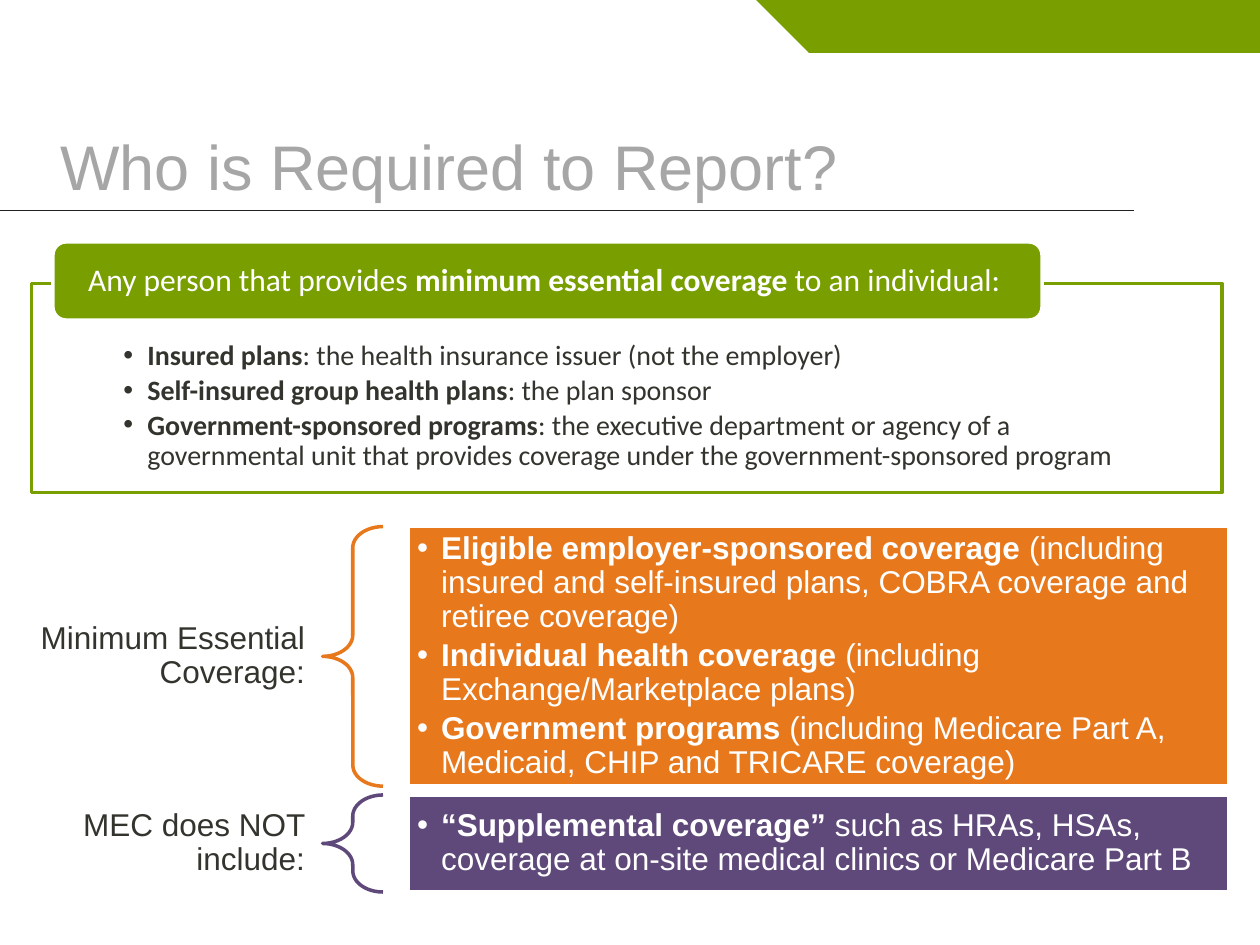
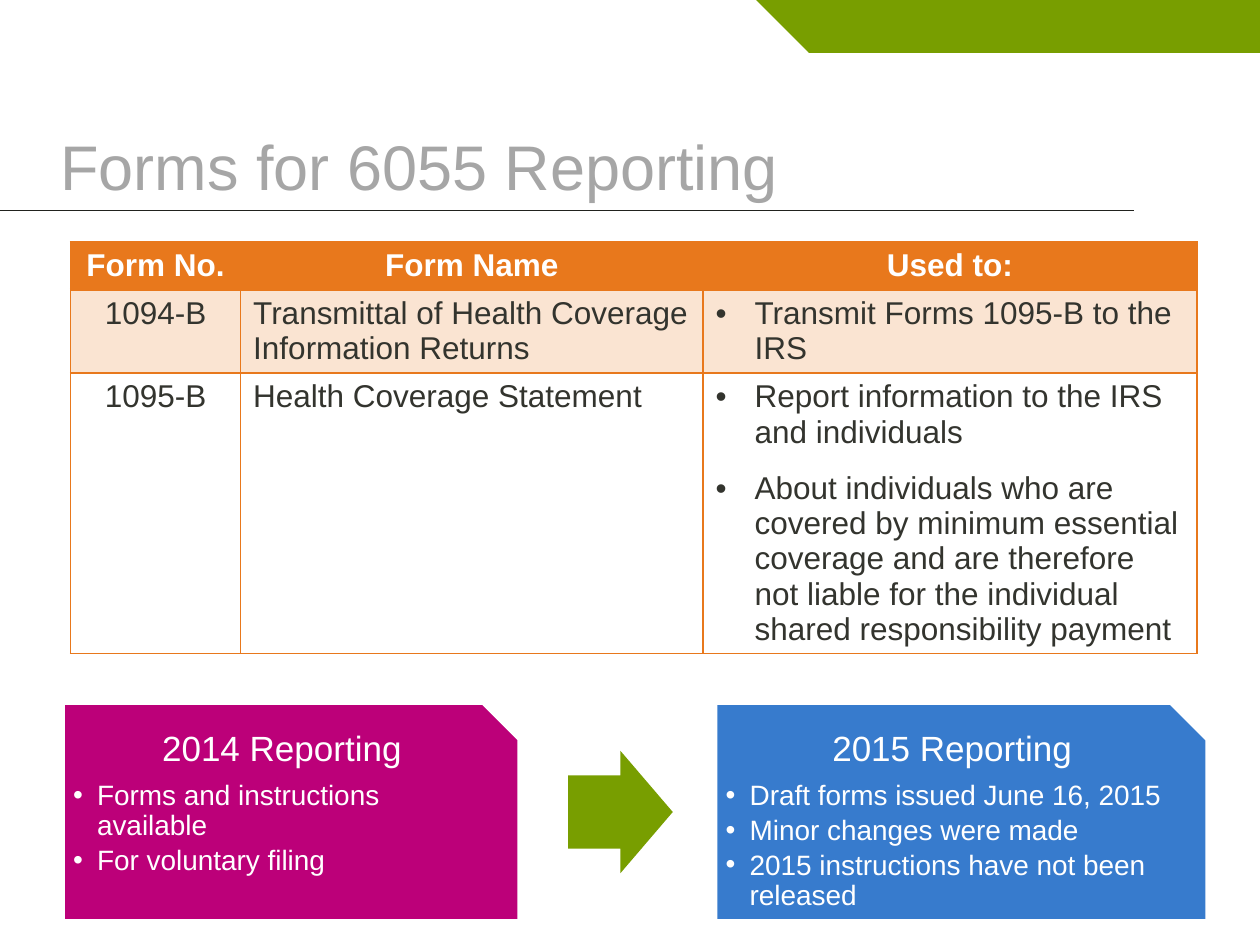
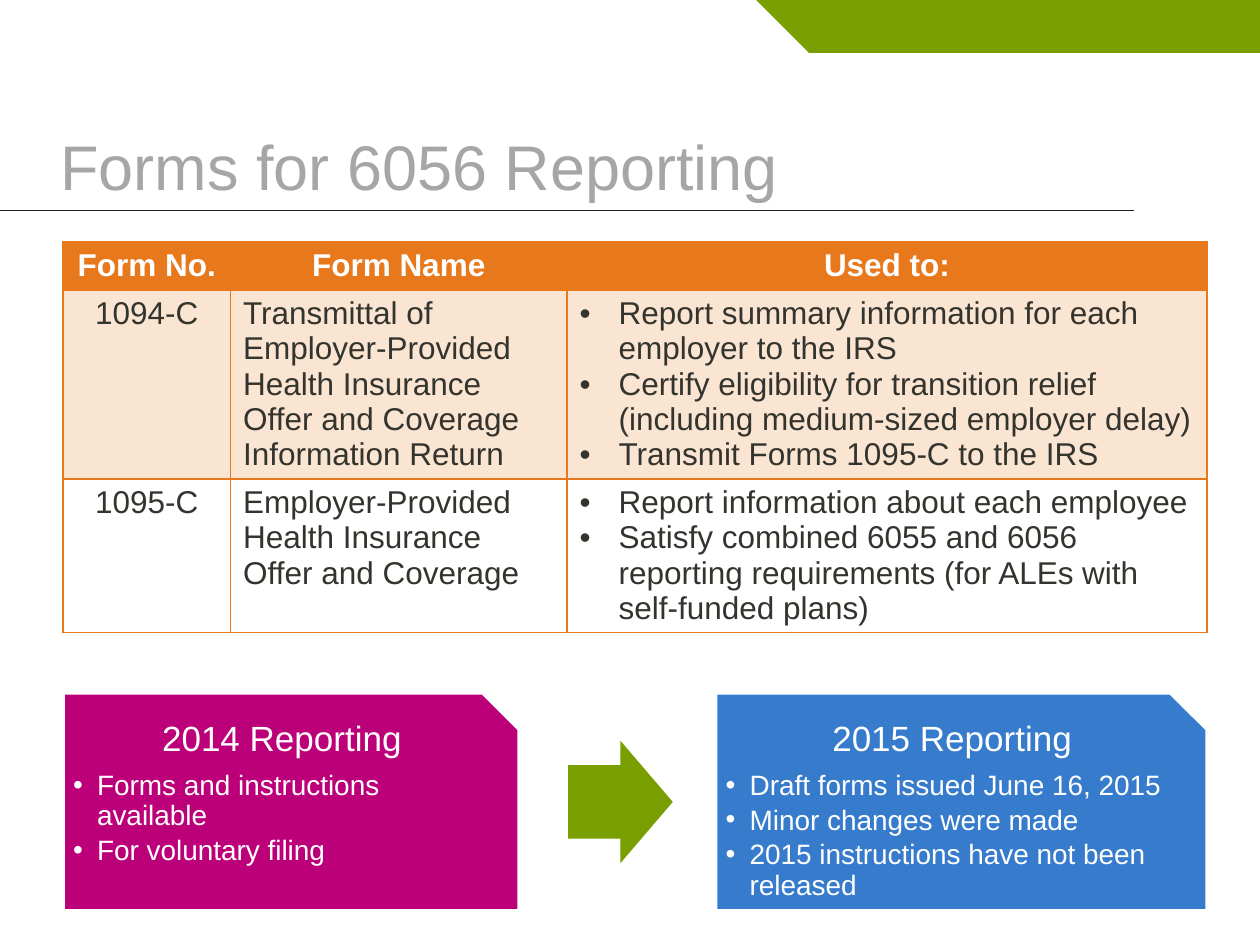
from dataclasses import dataclass
from typing import Any, NamedTuple

from lxml.etree import SubElement
from pptx import Presentation
from pptx.dml.color import RGBColor
from pptx.enum.shapes import MSO_CONNECTOR, MSO_SHAPE
from pptx.enum.text import MSO_ANCHOR, MSO_AUTO_SIZE, PP_ALIGN
from pptx.oxml.ns import qn
from pptx.util import Inches, Pt

HUES = {
    "green": "789E00", "orange": "E8781C", "peach": "FAE4D2",
    "purple": "5F497A", "pink": "BC0079", "blue": "377BCD",
    "white": "FFFFFF", "ink": "33342E", "rule": "21221E", "title": "A6A6A6",
}


class Box(NamedTuple):
    left: float
    top: float
    width: float
    height: float


@dataclass(frozen=True)
class Style:
    """How a paragraph looks; text before "|" is bold."""
    size: float = 18
    hue: str = "white"
    font: str = "Arial"
    align: Any = PP_ALIGN.LEFT
    indent: float = 0
    hang: float = 0
    space: float = 0.9
    after: float = 0
    bold: bool = False


@dataclass(frozen=True)
class Brace:
    label: str
    hue: str
    top: float
    height: float
    items: tuple[str, ...]


@dataclass(frozen=True)
class Card:
    title: str
    hue: str
    left: float
    width: float
    items: tuple[str, ...]


@dataclass(frozen=True)
class Forms:
    title: str
    left: float
    cols: tuple[float, ...]
    rows: tuple[float, ...]
    gap: float
    cards: float
    cells: tuple[tuple[str, str, tuple[str, ...]], ...]


LIST = Style(indent=0.19, hang=0.19, after=2.9)
SMALL = Style(size=16, indent=0.19, hang=0.19, after=2.6)
PLAN = Style(size=16, hue="ink", font="Calibri", indent=0.19, hang=0.19, after=2.6)
LEAD = Style(font="Calibri")
LABEL = Style(hue="ink", align=PP_ALIGN.RIGHT)
NAME = Style(size=20, align=PP_ALIGN.CENTER, after=7)
TITLE = Style(size=36, hue="title", indent=0.38, space=1)
HEAD = Style(align=PP_ALIGN.CENTER, space=1, bold=True)
CODE = Style(hue="ink", align=PP_ALIGN.CENTER, space=1)
CELL = Style(hue="ink", space=1)

HEADS = ("Form No.", "Form Name", "Used to:")

PLANS = (
    "Insured plans|: the health insurance issuer (not the employer)",
    "Self-insured group health plans|: the plan sponsor",
    "Government-sponsored programs|: the executive department or agency of a "
    "governmental unit that provides coverage under the government-sponsored program",
)

BRACES = (
    Brace("Minimum Essential Coverage:", "orange", 4.18, 2.06, (
        "Eligible employer-sponsored coverage |(including insured and "
        "self-insured plans, COBRA coverage and retiree coverage)",
        "Individual health coverage |(including Exchange/Marketplace plans)",
        "Government programs |(including Medicare Part A, Medicaid, CHIP and "
        "TRICARE coverage)")),
    Brace("MEC does NOT include:", "purple", 6.31, 0.77, (
        "“Supplemental coverage” |such as HRAs, HSAs, coverage at on-site "
        "medical clinics or Medicare Part B",)),
)

CARDS = (
    Card("2014 Reporting", "pink", 0.5, 3.62,
         ("Forms and instructions available", "For voluntary filing")),
    Card("2015 Reporting", "blue", 5.68, 3.9,
         ("Draft forms issued June 16, 2015", "Minor changes were made",
          "2015 instructions have not been released")),
)

FORMS = (
    Forms("Forms for 6055 Reporting", 0.56, (1.35, 3.67, 3.92),
          (0.38, 0.65, 2.22), 12, 5.58, (
              ("1094-B", "Transmittal of Health Coverage Information Returns",
               ("Transmit Forms 1095-B to the IRS",)),
              ("1095-B", "Health Coverage Statement",
               ("Report information to the IRS and individuals",
                "About individuals who are covered by minimum essential coverage "
                "and are therefore not liable for the individual shared "
                "responsibility payment")))),
    Forms("Forms for 6056 Reporting", 0.5, (1.33, 2.67, 5.08),
          (0.38, 1.49, 1.22), 0, 5.5, (
              ("1094-C", "Transmittal of Employer-Provided Health Insurance "
               "Offer and Coverage Information Return",
               ("Report summary information for each employer to the IRS",
                "Certify eligibility for transition relief (including "
                "medium-sized employer delay)",
                "Transmit Forms 1095-C to the IRS")),
              ("1095-C", "Employer-Provided Health Insurance Offer and Coverage",
               ("Report information about each employee",
                "Satisfy combined 6055 and 6056 reporting requirements (for ALEs "
                "with self-funded plans)")))),
)


# Basic tools
def tint(name: str) -> RGBColor:
    return RGBColor.from_string(HUES[name])


def put(item: Any, values: dict[str, Any]) -> None:
    for key, value in values.items():
        setattr(item, key, value)


def place(item: Any, box: Box) -> None:
    put(item, {key: Inches(value) for key, value in box._asdict().items()})


def frame(item: Any, anchor: Any, pads: tuple[float, ...]) -> Any:
    text = item.text_frame
    sides = ("margin_left", "margin_top", "margin_right", "margin_bottom")
    put(text, {"word_wrap": True, "auto_size": MSO_AUTO_SIZE.NONE,
               "vertical_anchor": anchor,
               **{side: Inches(pad) for side, pad in zip(sides, pads)}})
    return text


def write(text: Any, lines: tuple[str, ...], style: Style, more: bool = False) -> None:
    for index, line in enumerate(lines):
        para = text.add_paragraph() if more or index else text.paragraphs[0]
        put(para, {"alignment": style.align, "line_spacing": style.space,
                   "space_before": Pt(0), "space_after": Pt(style.after)})
        props = para._p.get_or_add_pPr()
        props.set("marL", str(Inches(style.indent)))
        props.set("indent", str(-Inches(style.hang)))
        if style.hang:
            SubElement(props, qn("a:buFont"), typeface="Arial")
            SubElement(props, qn("a:buChar"), char="•")
        parts = line.split("|")
        for spot, part in enumerate(parts):
            run = para.add_run()
            run.text = part
            # Of three parts the middle one is bold; of two, the first
            strong = len(parts) > 1 and spot == len(parts) - 2
            put(run.font, {"name": style.font, "size": Pt(style.size),
                           "bold": style.bold or strong})
            run.font.color.rgb = tint(style.hue)


def shape(slide: Any, kind: Any, box: Box, fill: str | None = None,
          line: str | None = None) -> Any:
    item = slide.shapes.add_shape(kind, *map(Inches, box))
    item.shadow.inherit = False
    if fill:
        item.fill.solid()
        item.fill.fore_color.rgb = tint(fill)
    else:
        item.fill.background()
    if line:
        item.line.color.rgb = tint(line)
        item.line.width = Pt(2)
    else:
        item.line.fill.background()
    return item


# Parts that every slide shares
def start(deck: Any, title: str) -> Any:
    slide = deck.slides.add_slide(deck.slide_layouts[5])
    rule = slide.shapes.add_connector(
        MSO_CONNECTOR.STRAIGHT, Inches(0), Inches(1.67), Inches(9), Inches(1.67))
    rule.line.color.rgb = tint("rule")
    rule.line.width = Pt(0.25)
    SubElement(rule._element.spPr, qn("a:effectLst"))
    shape(slide, MSO_SHAPE.RECTANGLE, Box(6.42, 0, 3.58, 0.42), "green")
    fold = shape(slide, MSO_SHAPE.RIGHT_TRIANGLE, Box(6, 0, 0.42, 0.42), "green")
    fold.rotation = 180
    head = slide.shapes.title
    place(head, Box(0, 0.45, 9.5, 1.21))
    write(frame(head, MSO_ANCHOR.BOTTOM, (0.1, 0.05, 0.1, 0.05)), (title,), TITLE)
    return slide


# Who reports
def brace(slide: Any, group: Brace) -> None:
    middle = group.top + group.height / 2
    label = slide.shapes.add_textbox(
        *map(Inches, Box(0.17, middle - 0.31, 2.39, 0.62)))
    write(frame(label, MSO_ANCHOR.MIDDLE, (0.14, 0.05, 0.14, 0.05)),
          (group.label,), LABEL)
    curve = shape(slide, MSO_SHAPE.LEFT_BRACE,
                  Box(2.56, group.top, 0.48, group.height), line=group.hue)
    curve.adjustments[0] = 0.35
    panel = shape(slide, MSO_SHAPE.RECTANGLE,
                  Box(3.24, group.top, 6.51, group.height), group.hue, "white")
    write(frame(panel, MSO_ANCHOR.MIDDLE, (0.07,) * 4), group.items, LIST)


def people(deck: Any) -> None:
    slide = start(deck, "Who is Required to Report?")
    panel = shape(slide, MSO_SHAPE.RECTANGLE, Box(0.25, 2.25, 9.45, 1.66),
                  "white", "green")
    write(frame(panel, MSO_ANCHOR.TOP, (0.73, 0.46, 0.73, 0.12)), PLANS, PLAN)
    tab = shape(slide, MSO_SHAPE.ROUNDED_RECTANGLE, Box(0.42, 1.92, 7.85, 0.62),
                "green", "white")
    write(frame(tab, MSO_ANCHOR.MIDDLE, (0.25, 0, 0.25, 0)),
          ("Any person that provides |minimum essential coverage |to an individual:",),
          LEAD)
    for group in BRACES:
        brace(slide, group)


# Form tables and yearly cards
def edge(cell: Any, base: float) -> None:
    props = cell._tc.get_or_add_tcPr()
    for side, width in {"L": 1, "R": 1, "T": 1, "B": base}.items():
        line = SubElement(props, qn(f"a:ln{side}"), w=str(Pt(width)))
        fill = SubElement(line, qn("a:solidFill"))
        SubElement(fill, qn("a:srgbClr"), val=HUES["orange"])


def grid(slide: Any, form: Forms) -> None:
    box = Box(form.left, 1.92, sum(form.cols), sum(form.rows))
    table = slide.shapes.add_table(
        len(form.rows), len(form.cols), *map(Inches, box)).table
    put(table, {"first_row": False, "horz_banding": False})
    for col, width in zip(table.columns, form.cols):
        col.width = Inches(width)
    for row, height in zip(table.rows, form.rows):
        row.height = Inches(height)
    uses = Style(hue="ink", indent=0.31, hang=0.31, space=1, after=form.gap)
    looks = ((HEAD,) * 3,) + ((CODE, CELL, uses),) * len(form.cells)
    fills = ("orange", "peach", "white")
    for y, values in enumerate((HEADS,) + form.cells):
        for x, value in enumerate(values):
            cell = table.cell(y, x)
            edge(cell, 1 if y else 2)
            cell.fill.solid()
            cell.fill.fore_color.rgb = tint(fills[y])
            cell.vertical_anchor = MSO_ANCHOR.TOP if y else MSO_ANCHOR.MIDDLE
            lines = (value,) if isinstance(value, str) else value
            write(cell.text_frame, lines, looks[y][x])


def years(slide: Any, top: float) -> None:
    for card in CARDS:
        item = shape(slide, MSO_SHAPE.SNIP_1_RECTANGLE,
                     Box(card.left, top, card.width, 1.73), card.hue, "white")
        text = frame(item, MSO_ANCHOR.TOP, (0.08,) * 4)
        write(text, (card.title,), NAME)
        write(text, card.items, SMALL, more=True)
    arrow = shape(slide, MSO_SHAPE.RIGHT_ARROW,
                  Box(4.51, top + 0.38, 0.83, 0.97), "green")
    arrow.adjustments[0] = 0.6


def main() -> None:
    deck = Presentation()
    put(deck, {"slide_width": Inches(10), "slide_height": Inches(7.5)})
    people(deck)
    for form in FORMS:
        slide = start(deck, form.title)
        grid(slide, form)
        years(slide, form.cards)
    deck.save("out.pptx")


if __name__ == "__main__":
    main()
